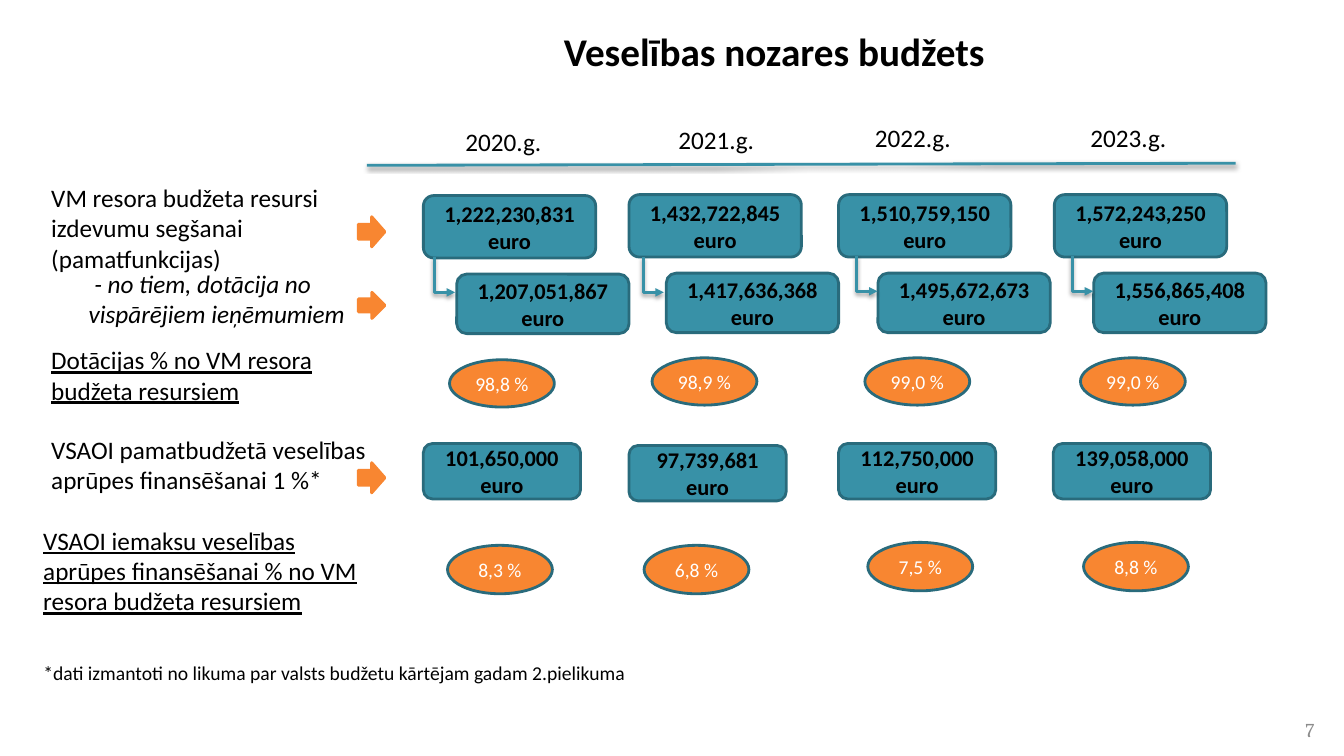
import pptx
import pptx.util
import pptx.dml.color
import pptx.enum.shapes
import pptx.enum.text
import pptx.oxml.ns
import lxml.etree

Pt = pptx.util.Pt
Kind = pptx.enum.shapes.MSO_SHAPE
Link = pptx.enum.shapes.MSO_CONNECTOR
Align = pptx.enum.text.PP_ALIGN
Mid = pptx.enum.text.MSO_ANCHOR.MIDDLE

HUES = {"teal": "3891A7", "edge": "296B7C", "warm": "F88631",
        "ink": "000000", "pale": "FFFFFF", "gray": "8C8C8C"}
BOLD = {"size": Pt(16), "bold": True}
SMALL = {"size": Pt(14)}
LINED = {"underline": True}


class Deck:
    """Holds the style and the current slide."""

    def __init__(self):
        self.show = pptx.Presentation()
        self.show.slide_width, self.show.slide_height = Pt(960), Pt(540)
        self.slide = self.show.slides.add_slide(self.show.slide_layouts[5])
        self.base = {"name": "Calibri", "size": Pt(18)}

    def hue(self, key):
        return pptx.dml.color.RGBColor.from_string(HUES[key])

    def words(self, shape, text, look, hue="ink", align=None):
        frame = shape.text_frame
        frame.text = text
        para = frame.paragraphs[0]
        para.alignment = align
        for key, value in {**self.base, **look}.items():
            setattr(para.font, key, value)
        para.font.color.rgb = self.hue(hue)
        return frame

    def title(self, text, x, y, w, h):
        shape = self.slide.shapes.title
        for key, value in {"left": x, "top": y, "width": w, "height": h}.items():
            setattr(shape, key, Pt(value))
        look = {"size": Pt(28), "bold": True}
        self.words(shape, text, look, align=Align.CENTER).vertical_anchor = Mid

    def label(self, text, x, y, w, h, look=None, **more):
        shape = self.slide.shapes.add_textbox(Pt(x), Pt(y), Pt(w), Pt(h))
        frame = self.words(shape, text, look or {}, **more)
        frame.word_wrap = True
        return frame

    def shape(self, kind, x, y, w, h, fill, edge):
        shape = self.slide.shapes.add_shape(kind, Pt(x), Pt(y), Pt(w), Pt(h))
        shape.shadow.inherit = False
        shape.fill.solid()
        shape.fill.fore_color.rgb = self.hue(fill)
        shape.line.color.rgb = self.hue(edge)
        shape.line.width = Pt(2)
        return shape

    def box(self, text, x, y, w, h):
        shape = self.shape(Kind.ROUNDED_RECTANGLE, x, y, w, h, "teal", "edge")
        frame = self.words(shape, text, BOLD, align=Align.CENTER)
        frame.word_wrap, frame.vertical_anchor = True, Mid

    def oval(self, text, x, y, w, h):
        shape = self.shape(Kind.OVAL, x, y, w, h, "warm", "edge")
        frame = self.words(shape, text, SMALL, "pale", Align.CENTER)
        frame.word_wrap, frame.vertical_anchor = False, Mid

    def arrow(self, x, y, w, h):
        self.shape(Kind.RIGHT_ARROW, x, y, w, h, "warm", "warm")

    def line(self, x1, y1, x2, y2, kind=Link.STRAIGHT):
        line = self.slide.shapes.add_connector(kind, Pt(x1), Pt(y1), Pt(x2), Pt(y2))
        line.line.color.rgb = self.hue("teal")
        line.line.width = Pt(2)
        # Soft shadow straight below
        part = line.element.spPr
        for tag, attrs in (
                ("effectLst", {}),
                ("outerShdw", {"blurRad": Pt(3.1), "dist": Pt(1.6),
                               "dir": 5400000, "rotWithShape": 0}),
                ("srgbClr", {"val": HUES["ink"]}),
                ("alpha", {"val": 38000})):
            part = lxml.etree.SubElement(part, pptx.oxml.ns.qn("a:" + tag))
            for key, value in attrs.items():
                part.set(key, str(value))
        return line

    def elbow(self, x, y, across, down):
        # A quarter turn of a one-bend connector: down, then right
        mid_x, mid_y = x + across / 2, y + down / 2
        line = self.line(mid_x + down / 2, mid_y - across / 2,
                         mid_x - down / 2, mid_y + across / 2, Link.ELBOW)
        props = line.element.spPr
        props.find(pptx.oxml.ns.qn("a:prstGeom")).set("prst", "bentConnector2")
        props.find(pptx.oxml.ns.qn("a:xfrm")).set("rot", "16200000")
        edge = props.find(pptx.oxml.ns.qn("a:ln"))
        lxml.etree.SubElement(edge, pptx.oxml.ns.qn("a:tailEnd")).set("type", "triangle")

    def row(self, draw, texts, lefts, tops, w, h):
        for text, x, y in zip(texts, lefts, tops):
            draw(text, x, y, w, h)


def main():
    deck = Deck()
    deck.title("Veselības nozares budžets", 193, 4.3, 720, 63.4)

    # Row labels
    for text, x, y, w, h, look in (
            ("VM resora budžeta resursi izdevumu segšanai (pamatfunkcijas)",
             29.5, 126.7, 246.2, 72.7, {}),
            (" - no tiem, dotācija no vispārējiem ieņēmumiem",
             56.2, 187.9, 200.9, 51.1, {"italic": True}),
            ("Dotācijas % no VM resora budžeta resursiem",
             29.5, 242.6, 228.2, 51.1, LINED),
            ("VSAOI pamatbudžetā veselības aprūpes finansēšanai 1 %*",
             29.5, 306.7, 257, 51.1, {}),
            ("VSAOI iemaksu veselības aprūpes finansēšanai % no VM resora budžeta resursiem",
             23.8, 371.5, 241.9, 72.7, LINED),
            ("*dati izmantoti no likuma par valsts budžetu kārtējam gadam 2.pielikuma",
             23.8, 468.7, 594, 24.5, SMALL)):
        deck.label(text, x, y, w, h, look)

    # Row arrows
    for y, h in ((154.8, 21.6), (208.8, 18.7), (330.5, 21.6)):
        deck.arrow(256, y, 19, h)

    # Year heads and rule
    deck.row(deck.label, [f"{year}.g." for year in range(2020, 2024)],
             (325.4, 477.4, 617.8, 771.8), (86.4, 85, 84.2, 84.2), 107.3, 28.8)
    deck.line(262.1, 118.1, 882.7, 116.6)

    # Budget totals, grants and levy sums
    for sums, lefts, tops, w, h in (
            (("1,222,230,831", "1,432,722,845", "1,510,759,150", "1,572,243,250"),
             (302.4, 449.3, 599, 753.1), (139.7, 139, 139, 139), 123.1, 44.6),
            (("1,207,051,867", "1,417,636,368", "1,495,672,673", "1,556,865,408"),
             (326.2, 475.9, 627.1, 781.2), (195.8, 195.1, 195.1, 195.1), 123.1, 42.5),
            (("101,650,000", "97,739,681", "112,750,000", "139,058,000"),
             (302.4, 449.3, 599, 752.4), (316.8, 318.2, 316.8, 316.8), 112.3, 39.6)):
        deck.row(deck.box, [f"{num} euro" for num in sums], lefts, tops, w, h)

    # Links from totals to grants
    for x, y in ((310.3, 183.6), (459.4, 183.6), (612, 182.9), (766.1, 182.9)):
        deck.elbow(x, y, 14.8, 25.2)

    # Shares in percent
    deck.row(deck.oval, ("98,8 %", "98,9 %", "99,0 %", "99,0 %"),
             (321.1, 465.8, 617.8, 771.8), (257, 255.6, 255.6, 255.6), 74.9, 33.8)
    deck.row(deck.oval, ("8,3 %", "6,8 %", "7,5 %", "8,8 %"),
             (319.7, 460.1, 619.9, 774), (389.5, 389.5, 387.4, 387.4), 74.9, 34.6)

    # Page number
    page = deck.label("7", 722.2, 506.9, 223.9, 28.8,
                      {"name": "Cambria", "size": Pt(14)}, hue="gray", align=Align.RIGHT)
    page.vertical_anchor = Mid

    deck.show.save("out.pptx")


if __name__ == "__main__":
    main()
